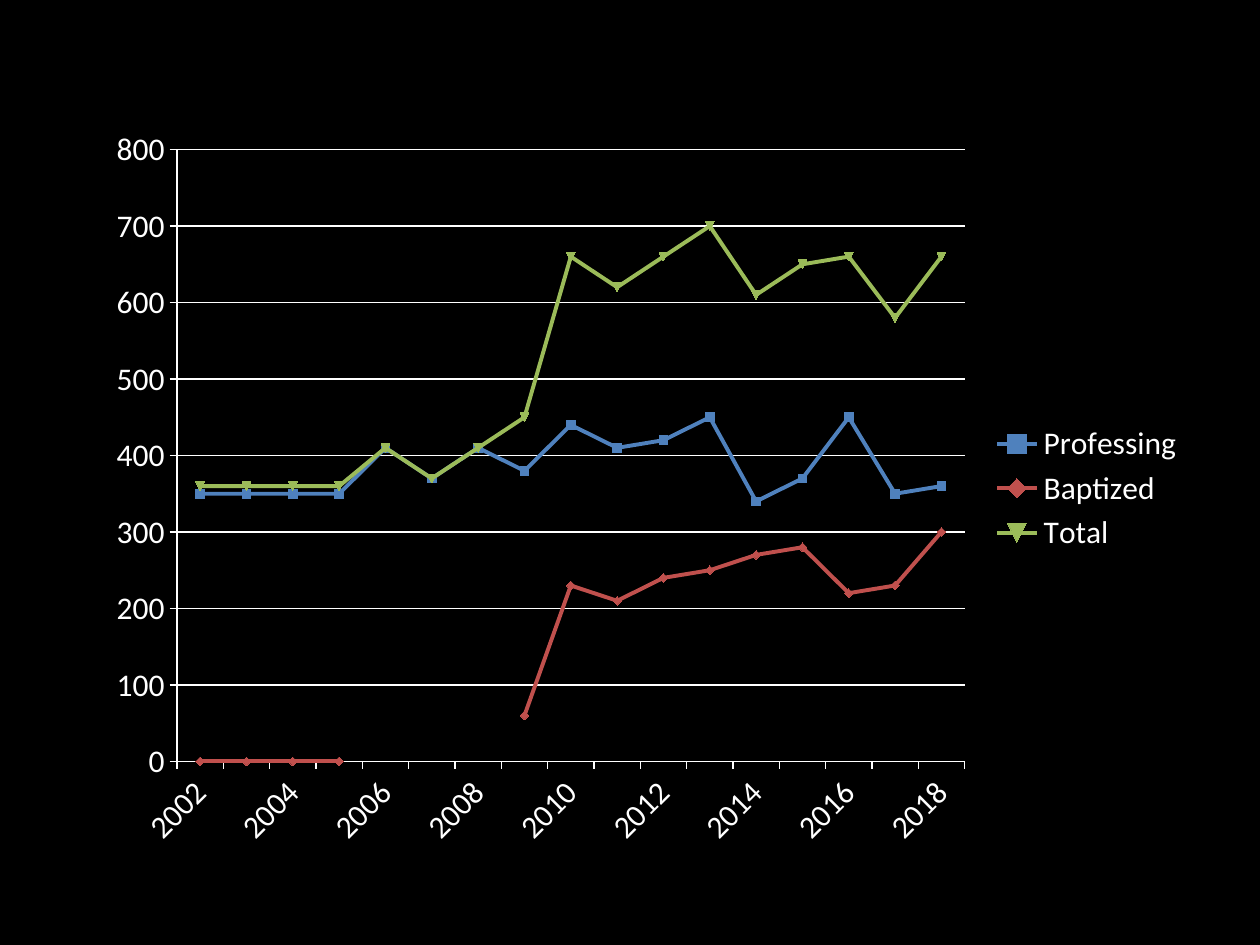
import pptx
import pptx.chart.data
import pptx.dml.color
import pptx.enum.chart
import pptx.oxml
import pptx.oxml.ns
import pptx.util

Pt = pptx.util.Pt
RGB = pptx.dml.color.RGBColor
ENUM = pptx.enum.chart
BLACK = RGB(0x00, 0x00, 0x00)
WHITE = RGB(0xFF, 0xFF, 0xFF)
BLUE = RGB(0x4F, 0x81, 0xBD)
RED = RGB(0xC0, 0x50, 0x4D)
GREEN = RGB(0x9B, 0xBB, 0x59)

YEARS = [str(year) for year in range(2002, 2019)]
SERIES = [
    ("Professing", BLUE, [350, 350, 350, 350, 410, 370, 410, 380, 440,
                          410, 420, 450, 340, 370, 450, 350, 360]),
    ("Baptized", RED, [0, 0, 0, 0, None, None, None, 60, 230,
                       210, 240, 250, 270, 280, 220, 230, 300]),
    ("Total", GREEN, [360, 360, 360, 360, 410, 370, 410, 450, 660,
                      620, 660, 700, 610, 650, 660, 580, 660]),
]


def set_line(line, color, width):
    line.color.rgb = color
    line.width = Pt(width)


def set_plot(chart, box, size):
    left, top, width, height = box
    wide, high = size
    area = chart._chartSpace.chart.plotArea
    for old in area.findall(pptx.oxml.ns.qn("c:layout")):
        area.remove(old)
    area.insert(0, pptx.oxml.parse_xml(
        f'<c:layout {pptx.oxml.ns.nsdecls("c")}><c:manualLayout>'
        '<c:layoutTarget val="inner"/><c:xMode val="edge"/><c:yMode val="edge"/>'
        f'<c:x val="{left / wide:.4f}"/><c:y val="{top / high:.4f}"/>'
        f'<c:w val="{width / wide:.4f}"/><c:h val="{height / high:.4f}"/>'
        '</c:manualLayout></c:layout>'))


def set_axes(chart):
    for axis in (chart.category_axis, chart.value_axis):
        axis.major_tick_mark = ENUM.XL_TICK_MARK.OUTSIDE
        axis.minor_tick_mark = ENUM.XL_TICK_MARK.NONE
        set_line(axis.format.line, WHITE, 0.75)
    years, values = chart.category_axis, chart.value_axis
    years.tick_labels.font.size = Pt(18)
    years._element.txPr.bodyPr.set("rot", "-2700000")
    skip = pptx.oxml.parse_xml(
        f'<c:tickLblSkip {pptx.oxml.ns.nsdecls("c")} val="2"/>')
    years._element.find(pptx.oxml.ns.qn("c:noMultiLvlLbl")).addprevious(skip)
    values.minimum_scale, values.maximum_scale = 0, 800
    values.major_unit = 100
    values.has_major_gridlines = True
    set_line(values.major_gridlines.format.line, WHITE, 0.75)


def add_trend(slide, left, top, width, height):
    data = pptx.chart.data.CategoryChartData(number_format="General")
    data.categories = YEARS
    for name, _, values in SERIES:
        data.add_series(name, values)
    chart = slide.shapes.add_chart(
        ENUM.XL_CHART_TYPE.LINE_MARKERS, Pt(left), Pt(top),
        Pt(width), Pt(height), data).chart
    chart.has_title = False
    chart.font.name = "Calibri"
    chart.font.size = Pt(18)
    chart.font.color.rgb = WHITE
    chart.has_legend = True
    chart.legend.position = ENUM.XL_LEGEND_POSITION.RIGHT
    chart.legend.include_in_layout = False
    plot = chart.plots[0]
    plot.vary_by_categories = False
    for series, (_, color, _) in zip(plot.series, SERIES):
        series.smooth = False
        set_line(series.format.line, color, 2.25)
        series.marker.size = 5
        series.marker.format.fill.solid()
        series.marker.format.fill.fore_color.rgb = color
        set_line(series.marker.format.line, color, 0.75)
    set_axes(chart)
    set_plot(chart, (47.1, 19.5, 450.2, 349.7), (width, height))


def main():
    deck = pptx.Presentation()
    deck.slide_width, deck.slide_height = Pt(720), Pt(540)
    slide = deck.slides.add_slide(deck.slide_layouts[6])
    slide.background.fill.solid()
    slide.background.fill.fore_color.rgb = BLACK
    add_trend(slide, 54, 66, 630, 426)
    deck.save("out.pptx")


if __name__ == "__main__":
    main()
